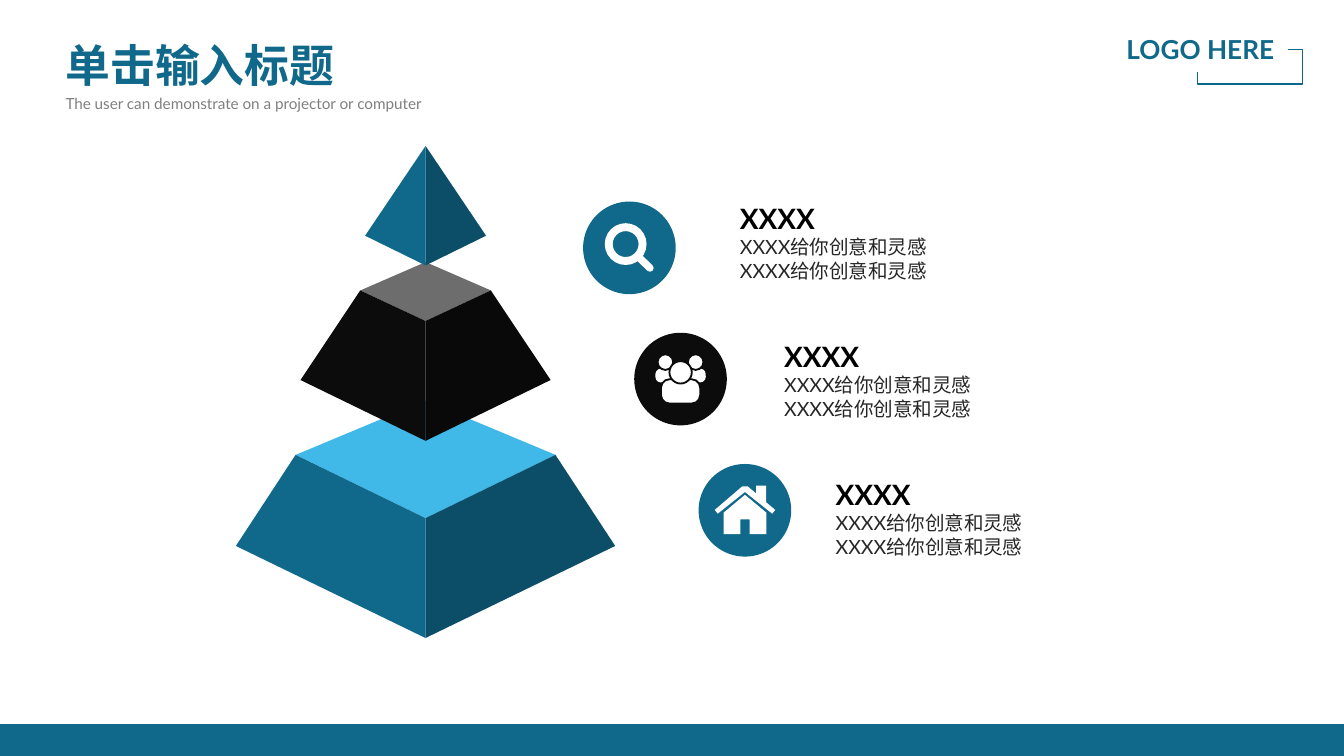
from dataclasses import dataclass
from typing import Callable

from lxml import etree
from pptx import Presentation
from pptx.dml.color import RGBColor
from pptx.enum.lang import MSO_LANGUAGE_ID
from pptx.enum.shapes import MSO_CONNECTOR, MSO_SHAPE
from pptx.enum.text import MSO_ANCHOR, PP_ALIGN
from pptx.oxml.ns import qn
from pptx.util import Pt

OVAL, RECTANGLE = MSO_SHAPE.OVAL, MSO_SHAPE.RECTANGLE
ROUNDED, DONUT = MSO_SHAPE.ROUNDED_RECTANGLE, MSO_SHAPE.DONUT
STRAIGHT, ELBOW = MSO_CONNECTOR.STRAIGHT, MSO_CONNECTOR.ELBOW
LEFT, RIGHT = PP_ALIGN.LEFT, PP_ALIGN.RIGHT
TOP = MSO_ANCHOR.TOP
CHINESE = MSO_LANGUAGE_ID.SIMPLIFIED_CHINESE


@dataclass(frozen=True)
class Theme:
    font: str = "Lato"
    blue: str = "10688B"
    dark_blue: str = "0C4E68"
    light_blue: str = "40B9E9"
    black: str = "0C0C0C"
    deep_black: str = "090909"
    gray: str = "6D6D6D"
    white: str = "FFFFFF"
    frame: str = "0D678B"
    heading: str = "000000"
    body: str = "262626"
    subtitle: str = "808080"
    title_size: float = 24
    heading_size: float = 15
    logo_size: float = 14
    body_size: float = 10.5
    subtitle_size: float = 8.2


THEME = Theme()
Point = tuple[float, float]


@dataclass(frozen=True)
class Tier:
    back: float
    shoulder: float
    front: float
    side: float
    base: float
    top_half: float
    base_half: float
    lid_color: str
    left_color: str
    right_color: str


@dataclass(frozen=True)
class Line:
    text: str
    size: float
    color: str
    bold: bool = False
    align: PP_ALIGN = LEFT
    spacing: float = 1.0


@dataclass(frozen=True)
class Item:
    center: Point
    color: str
    text_left: float
    draw_icon: Callable


def draw_polygon(slide, points: list[Point], color: str):
    corners = [(Pt(x), Pt(y)) for x, y in points]
    builder = slide.shapes.build_freeform(*corners[0])
    builder.add_line_segments(corners[1:], close=True)
    return paint(builder.convert_to_shape(), color)


def paint(shape, color: str, outline: str | None = None):
    shape.shadow.inherit = False
    shape.fill.solid()
    shape.fill.fore_color.rgb = RGBColor.from_string(color)
    if outline:
        shape.line.color.rgb = RGBColor.from_string(outline)
        shape.line.width = Pt(1)
    else:
        shape.line.fill.background()
    return shape


def draw_centered(slide, kind, center: Point, width: float, height: float,
                  color: str, outline: str | None = None):
    shape = slide.shapes.add_shape(kind, Pt(center[0] - width / 2), Pt(center[1] - height / 2),
                                   Pt(width), Pt(height))
    return paint(shape, color, outline)


def draw_line(slide, kind, start: Point, end: Point, color: str, width: float):
    connector = slide.shapes.add_connector(kind, *(Pt(value) for value in (*start, *end)))
    connector.line.color.rgb = RGBColor.from_string(color)
    connector.line.width = Pt(width)
    etree.SubElement(connector._element.spPr, qn("a:effectLst"))
    return connector


def draw_text(slide, left: float, top: float, width: float, height: float,
              lines: list[Line], wrap: bool = True) -> None:
    box = slide.shapes.add_textbox(Pt(left), Pt(top), Pt(width), Pt(height))
    frame = box.text_frame
    frame.word_wrap = wrap
    frame.vertical_anchor = TOP
    for index, line in enumerate(lines):
        paragraph = frame.paragraphs[0] if index == 0 else frame.add_paragraph()
        paragraph.alignment = line.align
        paragraph.line_spacing = line.spacing
        run = paragraph.add_run()
        run.text = line.text
        formats = {"name": THEME.font, "size": Pt(line.size), "bold": line.bold,
                   "language_id": CHINESE}
        for name, value in formats.items():
            setattr(run.font, name, value)
        run.font.color.rgb = RGBColor.from_string(line.color)


def draw_tier(slide, tier: Tier, axis: float) -> None:
    if tier.top_half:
        draw_polygon(slide, [(axis - tier.top_half, tier.shoulder), (axis, tier.back),
                             (axis + tier.top_half, tier.shoulder), (axis, tier.front)],
                     tier.lid_color)
    for side, color in ((1, tier.right_color), (-1, tier.left_color)):
        face = [(axis, tier.front), (axis + side * tier.top_half, tier.shoulder),
                (axis + side * tier.base_half, tier.side), (axis, tier.base)]
        draw_polygon(slide, face, color)


def draw_magnifier(slide, center: Point, color: str) -> None:
    x, y = center
    lens = draw_centered(slide, DONUT, (x - 2, y - 2), 22.4, 22.4, THEME.white)
    lens.adjustments[0] = 0.19
    handle = draw_line(slide, STRAIGHT, (x + 5.5, y + 5.5), (x + 11, y + 10.8), THEME.white, 4)
    handle.line._get_or_add_ln().set("cap", "rnd")


def draw_people(slide, center: Point, color: str) -> None:
    x, y = center
    for side in (-1, 1):
        body = draw_centered(slide, ROUNDED, (x + side * 9.2, y - 1.9), 8.6, 7.4, THEME.white)
        body.adjustments[0] = 0.4
        draw_centered(slide, OVAL, (x + side * 8.1, y - 9.1), 8.4, 8.4, THEME.white, color)
    body = draw_centered(slide, ROUNDED, (x, y + 6.6), 21, 13, THEME.white, color)
    body.adjustments[0] = 0.35
    draw_centered(slide, OVAL, (x, y - 3.6), 12, 12, THEME.white, color)


def draw_house(slide, center: Point, color: str) -> None:
    x, y = center
    roof = [(-16.2, -0.2), (-1.5, -12.8), (1.5, -12.8), (6, -9), (6, -13.2), (11.3, -13.2),
            (11.3, -4.3), (16.2, -0.2), (14.6, 1.8), (0, -9.8), (-14.6, 1.8)]
    walls = [(-11.5, 1.3), (0, -8.3), (11.5, 1.3), (11.5, 12.7), (2.5, 12.7),
             (2.5, 4.8), (-2.5, 4.8), (-2.5, 12.7), (-11.5, 12.7)]
    for outline in (roof, walls):
        draw_polygon(slide, [(x + dx, y + dy) for dx, dy in outline], THEME.white)


def draw_logo_frame(slide) -> None:
    connector = draw_line(slide, ELBOW, (671.8, 56.9), (659.5, 8.6), THEME.frame, 0.75)
    properties = connector._element.spPr
    properties.find(qn("a:xfrm")).set("rot", "5400000")
    geometry = properties.find(qn("a:prstGeom"))
    geometry.set("prst", "bentConnector4")
    guides = geometry.find(qn("a:avLst"))
    for name, value in (("adj1", -49500), ("adj2", 116200)):
        etree.SubElement(guides, qn("a:gd"), name=name, fmla=f"val {value}")


TIERS = [
    Tier(214.6, 243.7, 277.6, 292.5, 341.8, 69.6, 101.6,
         THEME.light_blue, THEME.blue, THEME.dark_blue),
    Tier(140.4, 155.6, 172, 203.6, 236.2, 35, 67,
         THEME.gray, THEME.black, THEME.deep_black),
    Tier(78.2, 78.2, 78.2, 126.3, 142.2, 0, 32.4,
         THEME.blue, THEME.blue, THEME.dark_blue),
]
ITEMS = [
    Item((337.2, 132.8), THEME.blue, 389.3, draw_magnifier),
    Item((364.6, 203.1), THEME.black, 413, draw_people),
    Item((399.1, 273.4), THEME.blue, 440.6, draw_house),
]


def main() -> None:
    presentation = Presentation()
    presentation.slide_width, presentation.slide_height = Pt(720), Pt(405)
    slide = presentation.slides.add_slide(presentation.slide_layouts[6])
    for tier in TIERS:
        draw_tier(slide, tier, axis=228)
    for index, item in enumerate(ITEMS):
        draw_centered(slide, OVAL, item.center, 49.6, 49.6, item.color)
        item.draw_icon(slide, item.center, item.color)
        draw_text(slide, item.text_left, 104.4 + index * 74, 121, 51, [
            Line("XXXX", THEME.heading_size, THEME.heading, bold=True),
            Line("XXXX给你创意和灵感" * 2, THEME.body_size, THEME.body)])
    draw_text(slide, 28, 16.6, 160.6, 36,
              [Line("单击输入标题", THEME.title_size, THEME.blue, bold=True)], wrap=False)
    draw_text(slide, 28, 45.4, 387, 18,
              [Line("The user can demonstrate on a projector or computer",
                    THEME.subtitle_size, THEME.subtitle, spacing=1.14)])
    draw_text(slide, 593.3, 14.4, 96.5, 24.5,
              [Line("LOGO HERE", THEME.logo_size, THEME.blue, bold=True, align=RIGHT)])
    draw_logo_frame(slide)
    draw_centered(slide, RECTANGLE, (360, 396.5), 720, 17, THEME.blue)
    presentation.save("out.pptx")


if __name__ == "__main__":
    main()
